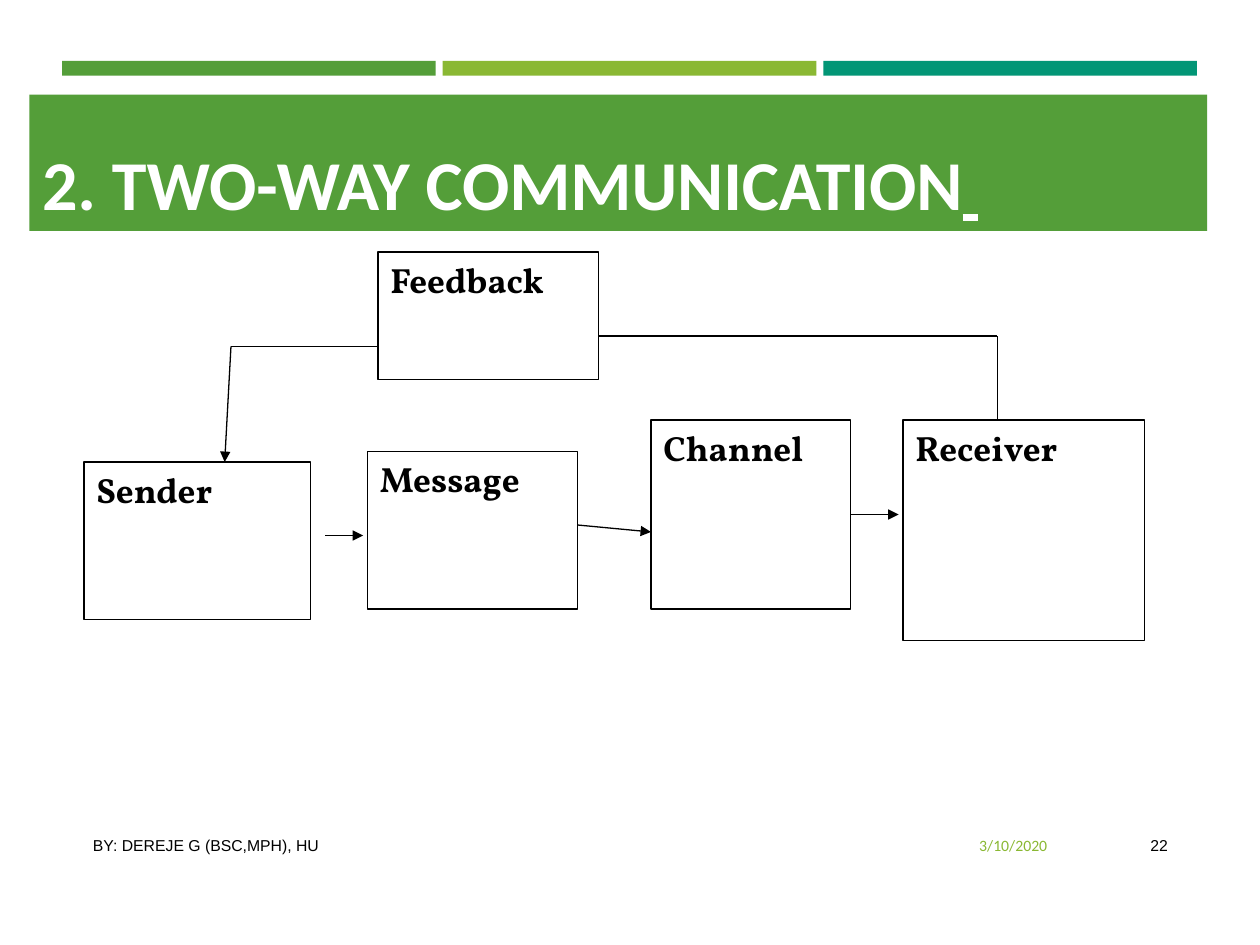
from pptx import Presentation
from pptx.dml.color import RGBColor
from pptx.enum.shapes import MSO_CONNECTOR, MSO_SHAPE
from pptx.enum.text import MSO_ANCHOR, MSO_AUTO_SIZE, PP_ALIGN
from pptx.oxml.ns import qn
from pptx.util import Pt
from lxml.etree import SubElement

GREEN = RGBColor(0x54, 0x9E, 0x39)
LIME = RGBColor(0x8A, 0xB8, 0x33)
TEAL = RGBColor(0x02, 0x96, 0x76)
BLACK = RGBColor(0, 0, 0)
WHITE = RGBColor(255, 255, 255)
RIGHT_SIDE = 3


def add_span(para, text, font="Calibri", size=9, color=BLACK, bold=False, underline=None):
    span = para.add_run()
    span.text = text
    span.font.name = font
    span.font.size = Pt(size)
    span.font.color.rgb = color
    span.font.bold = bold
    span.font.underline = underline


class Slide:
    """Holds the page and the style shared by its elements."""

    line_width = Pt(0.75)
    label_style = dict(font="Vollkorn", size=20, bold=True)
    title_style = dict(size=40, color=WHITE, bold=True)

    def __init__(self, page):
        self.page = page

    def title(self, text, left, top, width, height):
        box = self.page.shapes.title
        box.left, box.top, box.width, box.height = map(Pt, (left, top, width, height))
        box.fill.solid()
        box.fill.fore_color.rgb = GREEN
        frame = box.text_frame
        frame.auto_size = MSO_AUTO_SIZE.NONE
        frame.vertical_anchor = MSO_ANCHOR.BOTTOM
        para = frame.paragraphs[0]
        para.alignment = PP_ALIGN.LEFT
        add_span(para, text, **self.title_style)
        add_span(para, " ", underline=True, **self.title_style)

    def rectangle(self, left, top, width, height, fill):
        box = self.page.shapes.add_shape(
            MSO_SHAPE.RECTANGLE, Pt(left), Pt(top), Pt(width), Pt(height))
        box.shadow.inherit = False
        box.fill.solid()
        box.fill.fore_color.rgb = fill
        box.line.fill.background()
        return box

    def node(self, text, left, top, width, height):
        box = self.rectangle(left, top, width, height, WHITE)
        box.line.color.rgb = BLACK
        box.line.width = self.line_width
        box.text_frame.vertical_anchor = MSO_ANCHOR.TOP
        para = box.text_frame.paragraphs[0]
        para.alignment = PP_ALIGN.LEFT
        add_span(para, text, **self.label_style)
        return box

    def footer(self, text, left, width, align=PP_ALIGN.LEFT, **style):
        box = self.page.shapes.add_textbox(Pt(left), Pt(468.5), Pt(width), Pt(29))
        frame = box.text_frame
        frame.word_wrap = True
        frame.vertical_anchor = MSO_ANCHOR.MIDDLE
        frame.paragraphs[0].alignment = align
        add_span(frame.paragraphs[0], text, **style)

    def connector(self, start, end, arrow=False):
        link = self.page.shapes.add_connector(
            MSO_CONNECTOR.STRAIGHT, *map(Pt, (*start, *end)))
        link.line.color.rgb = BLACK
        link.line.width = self.line_width
        if arrow:
            SubElement(link.line._get_or_add_ln(), qn("a:tailEnd"), type="triangle")
        SubElement(link._element.spPr, qn("a:effectLst"))
        return link


def main():
    deck = Presentation()
    deck.slide_width, deck.slide_height = Pt(720), Pt(540)
    slide = Slide(deck.slides.add_slide(deck.slide_layouts[5]))

    for index, color in enumerate((GREEN, LIME, TEAL)):
        slide.rectangle(35.5 + index * 217.5, 34.8, 213.5, 8.5, color)
    slide.footer("3/10/2020", 438, 167.5, PP_ALIGN.RIGHT, color=LIME)
    slide.footer("BY: DEREJE G (BSC,MPH), HU", 46, 384, font="Arial")
    slide.footer("22", 614, 60.5, PP_ALIGN.RIGHT, font="Arial")
    slide.title("2. TWO-WAY COMMUNICATION", 16.8, 54, 673, 78)

    slide.node("Sender", 48, 264, 129.6, 90)
    slide.node("Message", 210, 258, 120, 90)
    channel = slide.node("Channel", 372, 240, 114, 108)
    slide.node("Receiver", 516, 240, 138, 126)
    slide.node("Feedback", 216, 144, 126, 72.7)

    slide.connector((186, 306), (207.5, 306), arrow=True)
    slide.connector((330, 300), (372, 304), arrow=True)
    to_receiver = slide.connector((486, 294), (513.5, 294), arrow=True)
    to_receiver.begin_connect(channel, RIGHT_SIDE)
    slide.connector((570, 240), (570, 192))
    slide.connector((570, 192), (342, 192))
    slide.connector((216, 198), (132, 198))
    slide.connector((132, 198), (128.4, 264), arrow=True)

    deck.save("out.pptx")


if __name__ == "__main__":
    main()
